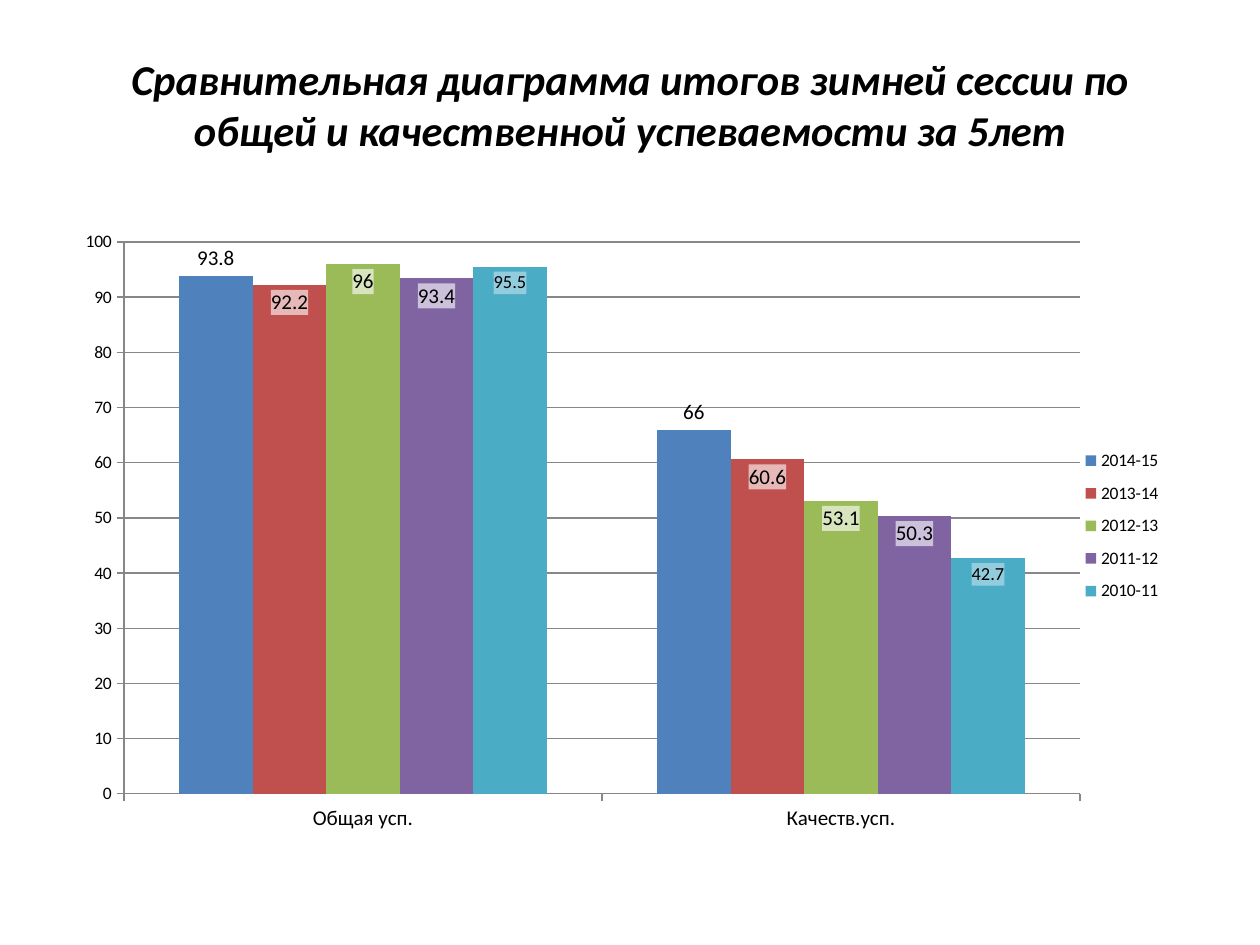
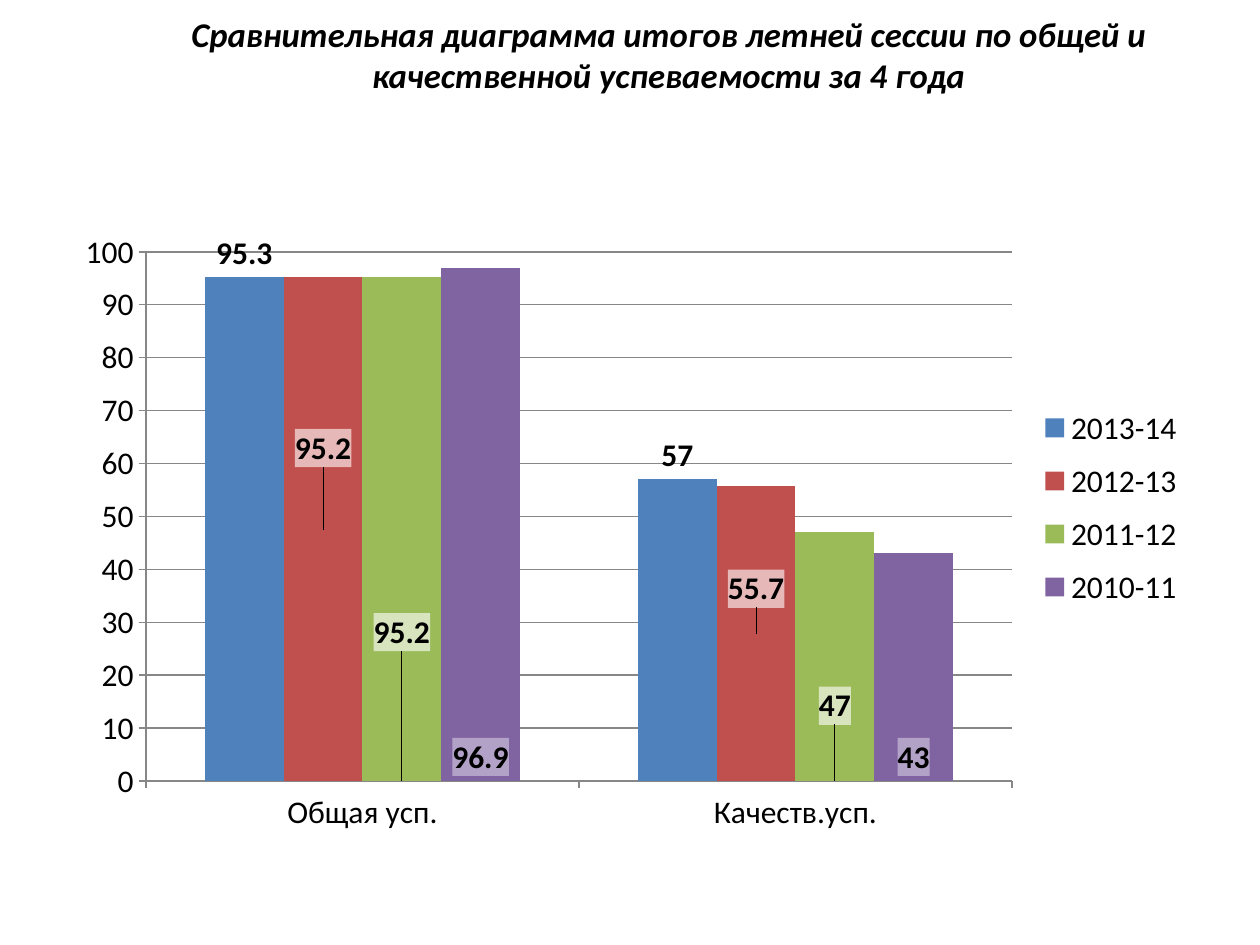
import pptx
import pptx.chart.data
import pptx.dml.color
import pptx.enum.chart
import pptx.enum.text
import pptx.oxml
import pptx.oxml.ns
import pptx.util

SCALE = 914400 / 126  # EMU per px
FONT = "Calibri"
BLACK, GRAY = "000000", "878787"
BLUE, RED, GREEN, PURPLE, AQUA = "4F81BD", "C0504D", "9BBB59", "8064A2", "4BACC6"
PINK, LIME, LILAC, MAUVE, SKY = "E6B9B8", "D7E4BD", "CCC1DA", "B3A2C7", "93CDDD"
CHART_BOX = (63, 220, 1134, 624)
CATEGORIES = ["Общая усп.", "Качеств.усп."]
POSITION = pptx.enum.chart.XL_LABEL_POSITION
TOP, INNER, MIDDLE, BASE = (POSITION.OUTSIDE_END, POSITION.INSIDE_END,
                            POSITION.CENTER, POSITION.INSIDE_BASE)


def color(value):
    return pptx.dml.color.RGBColor.from_string(value)


def layout(tags):
    """Manual chart layout from a mapping of tag to value."""
    body = "".join(f'<c:{tag} val="{value}"/>' for tag, value in tags.items())
    return pptx.oxml.parse_xml(
        f'<c:layout {pptx.oxml.ns.nsdecls("c")}><c:manualLayout>{body}'
        '</c:manualLayout></c:layout>')


# Series: name, values, bar colour, label position, label fill, label size,
# vertical label shifts in px
slides = [
    dict(title="Сравнительная диаграмма итогов зимней сессии по общей и "
               "качественной успеваемости за 5лет",
         title_box=(63, 38, 1134, 158), title_size=24.3, title_lift=26,
         category_size=12, value_size=10, legend_size=10, bold=False,
         plot=(124, 242, 956, 552), legend=(1082, 438, 80, 176),
         series=[("2014-15", (93.8, 66), BLUE, TOP, None, 12, ()),
                 ("2013-14", (92.2, 60.6), RED, INNER, PINK, 12, ()),
                 ("2012-13", (96, 53.1), GREEN, INNER, LIME, 12, ()),
                 ("2011-12", (93.4, 50.3), PURPLE, INNER, LILAC, 12, ()),
                 ("2010-11", (95.5, 42.7), AQUA, INNER, SKY, 10.5, ())]),
    dict(title="Сравнительная диаграмма итогов летней сессии по общей и "
               "качественной успеваемости за 4 года",
         title_box=(126, 0, 1085, 108), title_size=19.8, title_lift=0,
         category_size=18, value_size=18, legend_size=18, bold=True,
         plot=(146, 252, 866, 529), legend=(1041, 394, 140, 227),
         series=[("2013-14", (95.3, 57), BLUE, TOP, None, 18, ()),
                 ("2012-13", (95.2, 55.7), RED, MIDDLE, PINK, 18, (-81, -45)),
                 ("2011-12", (95.2, 47), GREEN, BASE, LIME, 18, (-125, -51)),
                 ("2010-11", (96.9, 43), PURPLE, BASE, MAUVE, 18, ())]),
]

deck = pptx.Presentation()
deck.slide_width = deck.slide_height = pptx.util.Inches(10)
deck.slide_height = pptx.util.Inches(7.5)

for content in slides:
    page = deck.slides.add_slide(deck.slide_layouts[5])

    # Title
    title = page.shapes.title
    title.left, title.top, title.width, title.height = (
        int(n * SCALE) for n in content["title_box"])
    frame = title.text_frame
    frame.text = content["title"]
    frame.vertical_anchor = pptx.enum.text.MSO_ANCHOR.MIDDLE
    frame.margin_bottom += int(content["title_lift"] * SCALE)
    para = frame.paragraphs[0]
    para.alignment = pptx.enum.text.PP_ALIGN.CENTER
    font = para.runs[0].font
    font.name, font.size = FONT, pptx.util.Pt(content["title_size"])
    font.bold = font.italic = True
    font.color.rgb = color(BLACK)

    # Chart
    data = pptx.chart.data.CategoryChartData()
    data.categories = CATEGORIES
    for name, values, *_ in content["series"]:
        data.add_series(name, values)
    chart = page.shapes.add_chart(
        pptx.enum.chart.XL_CHART_TYPE.COLUMN_CLUSTERED,
        *(int(n * SCALE) for n in CHART_BOX), data).chart
    chart.has_title = False
    chart.font.name, chart.font.size = FONT, pptx.util.Pt(18)
    chart.font.color.rgb = color(BLACK)
    plot = chart.plots[0]
    plot.vary_by_categories = False
    plot.gap_width, plot.overlap = 150, 0

    # Axes
    for axis, size in ((chart.category_axis, content["category_size"]),
                       (chart.value_axis, content["value_size"])):
        axis.tick_labels.font.size = pptx.util.Pt(size)
        axis.major_tick_mark = pptx.enum.chart.XL_TICK_MARK.OUTSIDE
        axis.format.line.color.rgb = color(GRAY)
    axis = chart.value_axis
    axis.minimum_scale, axis.maximum_scale, axis.major_unit = 0, 100, 10
    axis.has_major_gridlines = True
    axis.major_gridlines.format.line.color.rgb = color(GRAY)

    # Legend
    chart.has_legend = True
    legend = chart.legend
    legend.position = pptx.enum.chart.XL_LEGEND_POSITION.RIGHT
    legend.include_in_layout = False
    legend.font.size = pptx.util.Pt(content["legend_size"])

    # Places of the plot and the legend, as shares of the chart
    plot_area = chart._chartSpace.chart.plotArea
    for part, box in ((plot_area, content["plot"]),
                      (legend._element, content["legend"])):
        for old in part.findall(pptx.oxml.ns.qn("c:layout")):
            part.remove(old)
        left, top, width, height = CHART_BOX
        tags = {"layoutTarget": "inner"} if part is plot_area else {}
        tags.update(xMode="edge", yMode="edge",
                    x=round((box[0] - left) / width, 4),
                    y=round((box[1] - top) / height, 4),
                    w=round(box[2] / width, 4), h=round(box[3] / height, 4))
        part.insert(0 if part is plot_area else 1, layout(tags))

    # Bars and their labels
    for series, row in zip(plot.series, content["series"]):
        name, values, bar_color, position, label_fill, size, shifts = row
        series.format.fill.solid()
        series.format.fill.fore_color.rgb = color(bar_color)
        series.invert_if_negative = False
        labels = series.data_labels
        labels.show_value = True
        moved = [series.points[n].data_label for n in range(len(shifts))]
        for label in [labels, *moved]:
            label.position = position
            label.font.size = pptx.util.Pt(size)
            label.font.bold = content["bold"]
            label.font.color.rgb = color(BLACK)
        for label, shift in zip(moved, shifts):
            label._get_or_add_dLbl().insert(
                1, layout({"x": 0, "y": round(shift / CHART_BOX[3], 3)}))
        if label_fill:
            for text in list(labels._element.iter(pptx.oxml.ns.qn("c:txPr"))):
                text.addprevious(pptx.oxml.parse_xml(
                    f'<c:spPr {pptx.oxml.ns.nsdecls("c", "a")}><a:solidFill>'
                    f'<a:srgbClr val="{label_fill}"/></a:solidFill></c:spPr>'))

deck.save("out.pptx")
